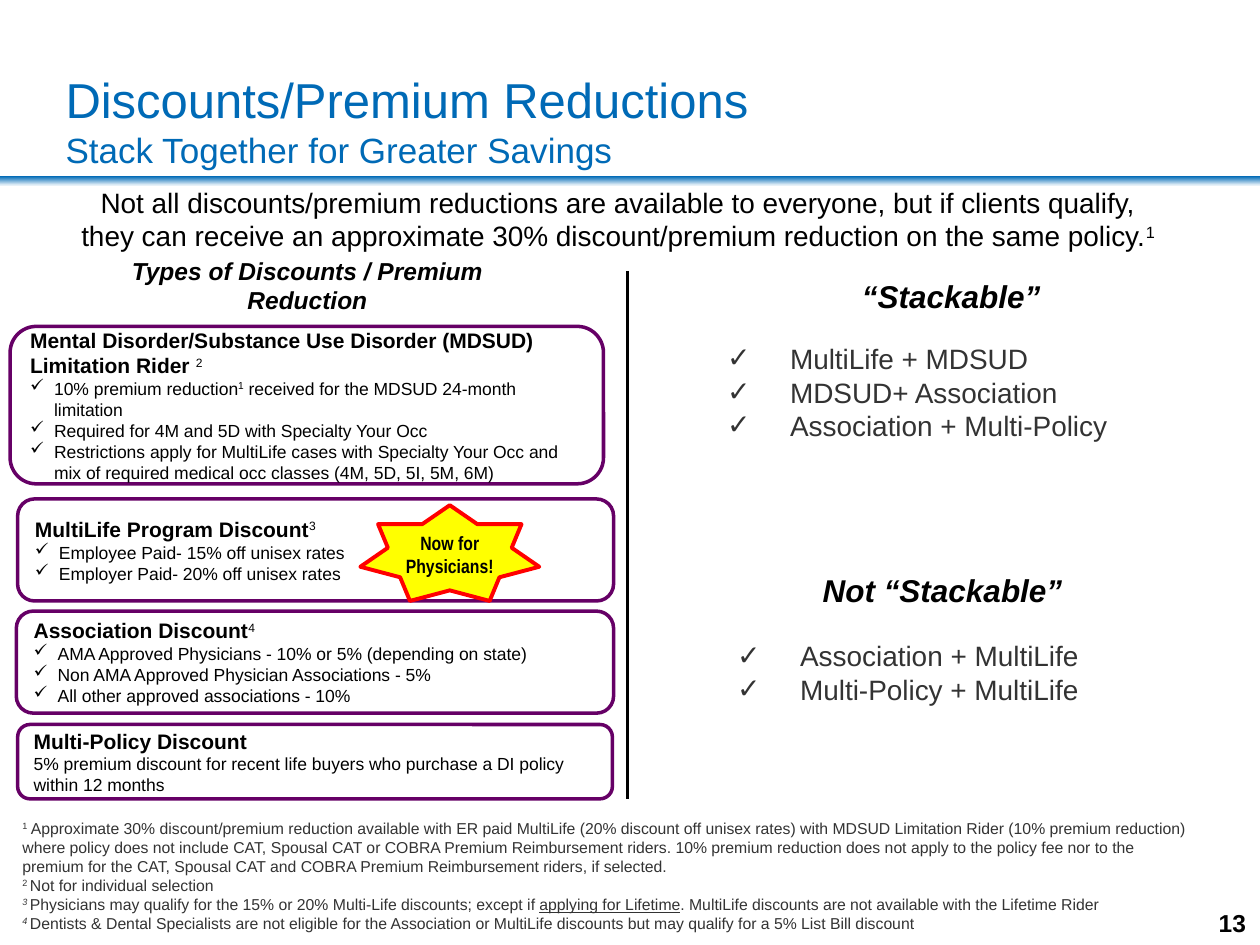
import pptx
import pptx.util
import pptx.dml.color
import pptx.enum.shapes
import pptx.enum.text
import lxml.etree

Inches, Pt = pptx.util.Inches, pptx.util.Pt
SHAPE = pptx.enum.shapes.MSO_SHAPE
ALIGN = pptx.enum.text.PP_ALIGN
ANCHOR = pptx.enum.text.MSO_ANCHOR

COLORS = {"blue": "006AB6", "pale": "E7F1F8", "black": "000000", "gray": "333333",
          "purple": "660066", "yellow": "FFFF00", "red": "FF0000"}

# A paragraph is a list of runs; a run is plain text or (text, changed format values).
SUPER = {"bold": False, "baseline": 30000}
SUPER_ITALIC = {"italic": True, "baseline": 30000}
HEADING = {"size": 12, "bold": True}
DETAIL = {"size": 10}
HEADER = {"bold": True, "italic": True}

TITLE = [("Discounts/Premium Reductions\v", {"size": 28}),
         "Stack Together for Greater Savings"]
INTRO = ["Not all discounts/premium reductions are available to everyone, but if clients "
         "qualify, they can receive an approximate 30% discount/premium reduction on the "
         "same policy.", ("1", SUPER)]

# (left, top, width, height), heading, details, bulleted
DISCOUNTS = [
    ((0.08, 2.59, 4.71, 1.25),
     ["Mental Disorder/Substance Use Disorder (MDSUD) Limitation Rider ", ("2", SUPER)],
     [["10% premium reduction", ("1", SUPER), " received for the MDSUD 24-month limitation"],
      ["Required for 4M and 5D with Specialty Your Occ"],
      ["Restrictions apply for MultiLife cases with Specialty Your Occ and mix of required "
       "medical occ classes (4M, 5D, 5I, 5M, 6M)"]], True),
    ((0.14, 3.96, 4.73, 0.81),
     ["MultiLife Program Discount", ("3", SUPER)],
     [["Employee Paid- 15% off unisex rates"],
      ["Employer Paid- 20% off unisex rates"]], True),
    ((0.13, 4.85, 4.74, 0.81),
     ["Association Discount", ("4", SUPER)],
     [["AMA Approved Physicians - 10% or 5% (depending on state)"],
      ["Non AMA Approved Physician Associations - 5%"],
      ["All other approved associations - 10%"]], True),
    ((0.14, 5.75, 4.72, 0.59),
     ["Multi-Policy Discount"],
     [["5% premium discount for recent life buyers who purchase a DI policy within 12 months"]],
     False),
]

HEADERS = [
    ((0.77, 1.98, 3.34, 0.57), "Types of Discounts / Premium Reduction", 14),
    ((5.88, 2.15, 3.34, 0.4), "“Stackable”", 18),
    ((5.69, 4.48, 3.58, 0.4), "Not “Stackable”", 18),
]

COMBINATIONS = [
    ((5.67, 2.66, 3.62, 0.91),
     ["MultiLife + MDSUD", "MDSUD+ Association", "Association + Multi-Policy"]),
    ((5.75, 5.02, 3.62, 0.64),
     ["Association + MultiLife", "Multi-Policy + MultiLife"]),
]

FOOTNOTES = [
    [("1", SUPER),
     " Approximate 30% discount/premium reduction available with ER paid MultiLife (20% discount "
     "off unisex rates) with MDSUD Limitation Rider (10% premium reduction) where policy does not "
     "include CAT, Spousal CAT or COBRA Premium Reimbursement riders. 10% premium reduction does "
     "not apply to the policy fee nor to the premium for the CAT, Spousal CAT and COBRA Premium "
     "Reimbursement riders, if selected."],
    [("2 ", SUPER), "Not for individual selection"],
    [("3 ", SUPER_ITALIC),
     "Physicians may qualify for the 15% or 20% Multi-Life discounts; except if ",
     ("applying for Lifetime", {"underline": True}),
     ". MultiLife discounts are not available with the Lifetime Rider"],
    [("4 ", SUPER_ITALIC),
     "Dentists & Dental Specialists are not eligible for the Association or MultiLife discounts "
     "but may qualify for a 5% List Bill discount"],
]


def rgb(name):
    return pptx.dml.color.RGBColor.from_string(COLORS[name])


def place(shape, box):
    shape.left, shape.top, shape.width, shape.height = map(Inches, box)


def add_bullet(paragraph, indent):
    properties = paragraph._p.get_or_add_pPr()
    properties.set("marL", str(Inches(indent)))
    properties.set("indent", str(-Inches(indent)))
    bullet = lxml.etree.SubElement(properties, pptx.oxml.ns.qn("a:buChar"))
    bullet.set("char", "✓")


def write(shape, paragraphs, anchor=ANCHOR.TOP, inset=None):
    """Fill a shape from (runs, format values, alignment, bullet indent) tuples."""
    frame = shape.text_frame
    frame.word_wrap = True
    frame.auto_size = pptx.enum.text.MSO_AUTO_SIZE.NONE
    frame.vertical_anchor = anchor
    if inset is not None:
        for side in ("left", "top", "right", "bottom"):
            setattr(frame, "margin_" + side, Inches(inset))
    for index, (runs, base, alignment, indent) in enumerate(paragraphs):
        paragraph = frame.add_paragraph() if index else frame.paragraphs[0]
        paragraph.alignment = alignment
        paragraph.space_before = Pt(0)
        if indent:
            add_bullet(paragraph, indent)
        for part in runs:
            text, changes = (part, {}) if isinstance(part, str) else part
            values = {"name": "Arial", "color": "black", **base, **changes}
            run = paragraph.add_run()
            run.text = text.rstrip("\v")
            if text.endswith("\v"):
                paragraph.add_line_break()
            run.font.color.rgb = rgb(values.pop("color"))
            run.font.size = Pt(values.pop("size"))
            if "baseline" in values:
                run._r.get_or_add_rPr().set("baseline", str(values.pop("baseline")))
            for name, value in values.items():
                setattr(run.font, name, value)


def add_shape(slide, kind, box, fill=None, line=None, width=2):
    shape = slide.shapes.add_shape(kind, *map(Inches, box))
    shape.shadow.inherit = False
    if fill:
        shape.fill.solid()
        shape.fill.fore_color.rgb = rgb(fill)
    else:
        shape.fill.background()
    if line:
        shape.line.color.rgb = rgb(line)
        shape.line.width = Pt(width)
    else:
        shape.line.fill.background()
    return shape


def add_text(slide, box, *content, **options):
    write(slide.shapes.add_textbox(*map(Inches, box)), *content, **options)


def main():
    presentation = pptx.Presentation()
    presentation.slide_width, presentation.slide_height = Inches(10), Inches(7.5)
    slide = presentation.slides.add_slide(presentation.slide_layouts[3])

    band = add_shape(slide, SHAPE.RECTANGLE, (0, 1.4, 10, 0.07))
    band.fill.gradient()
    band.fill.gradient_angle = 270
    for stop, color in zip(band.fill.gradient_stops, ("blue", "pale")):
        stop.color.rgb = rgb(color)

    title, *bodies = slide.placeholders
    place(title, (0.52, 0.5, 8.9, 0.91))
    write(title, [(TITLE, {"size": 20, "color": "blue"}, ALIGN.LEFT, 0)], ANCHOR.MIDDLE, 0)
    for body, (box, lines) in zip(bodies, COMBINATIONS):
        place(body, box)
        write(body, [([line], {"size": 16, "color": "gray"}, ALIGN.LEFT, 0.5) for line in lines])

    add_text(slide, (0.52, 1.42, 8.77, 0.64), [(INTRO, {"size": 16}, ALIGN.CENTER, 0)])
    for box, text, size in HEADERS:
        add_text(slide, box, [([text], {**HEADER, "size": size}, ALIGN.CENTER, 0)])

    for box, heading, details, bulleted in DISCOUNTS:
        card = add_shape(slide, SHAPE.ROUNDED_RECTANGLE, box, line="purple")
        indent = 0.19 if bulleted else 0
        write(card, [(heading, HEADING, ALIGN.LEFT, 0)]
              + [(runs, DETAIL, ALIGN.LEFT, indent) for runs in details], ANCHOR.MIDDLE)

    star = add_shape(slide, SHAPE.STAR_7_POINT, (2.86, 4.01, 1.42, 0.76), "yellow", "red", 2.25)
    write(star, [(["Now for Physicians!"], {"name": "Arial Narrow", "size": 11, "bold": True},
                  ALIGN.CENTER, 0)], ANCHOR.BOTTOM, 0)

    divider = slide.shapes.add_connector(pptx.enum.shapes.MSO_CONNECTOR.STRAIGHT,
                                         *map(Inches, (4.98, 2.15, 4.98, 6.34)))
    divider.line.color.rgb = rgb("black")
    divider.line.width = Pt(2.25)
    lxml.etree.SubElement(divider._element.spPr, pptx.oxml.ns.qn("a:effectLst"))

    add_text(slide, (0.08, 6.45, 9.54, 1.01),
             [(runs, {"size": 9, "color": "gray"}, ALIGN.LEFT, 0) for runs in FOOTNOTES])
    add_text(slide, (7.56, 6.92, 2.33, 0.52),
             [(["13"], {"size": 14, "bold": True}, ALIGN.RIGHT, 0)], ANCHOR.BOTTOM, 0)
    presentation.save("out.pptx")


if __name__ == "__main__":
    main()
